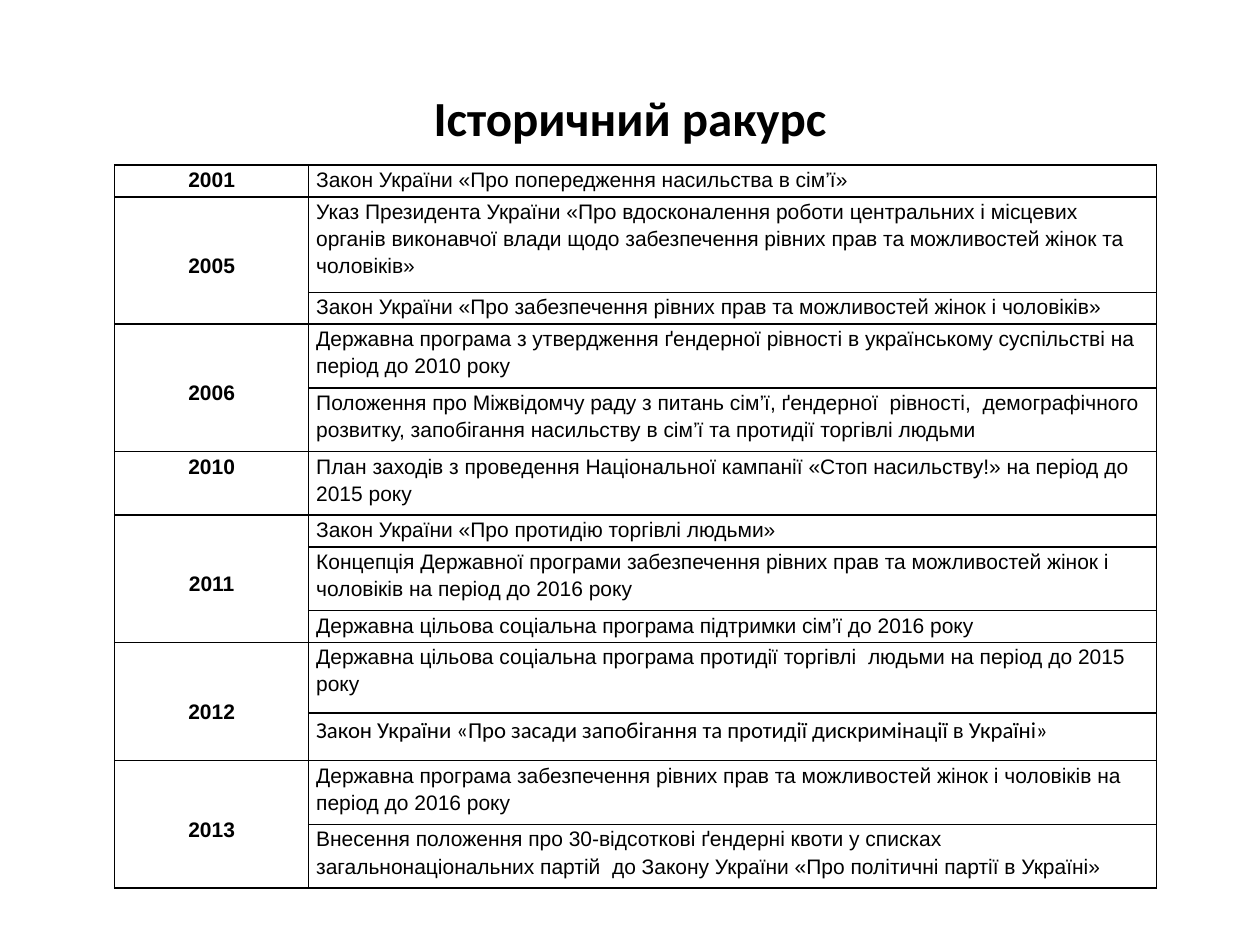
from lxml.etree import SubElement
from pptx import Presentation
from pptx.dml.color import RGBColor
from pptx.enum.text import MSO_ANCHOR as Anchor, PP_ALIGN as Align
from pptx.oxml.ns import qn
from pptx.util import Inches, Pt

BLACK = RGBColor(0x00, 0x00, 0x00)
WHITE = RGBColor(0xFF, 0xFF, 0xFF)
SLIDE_W, SLIDE_H = Inches(10), Inches(7.5)

# Row heights: one text line is the unit, two rows are set apart
LINE = 4.8 / 19
TALL, SPACED = 0.56, 0.38
YEAR_DROP = Inches(0.43)

# Year, then its documents as (text, row height)
HISTORY = [
    ("2001", [("Закон України «Про попередження насильства в сім’ї»", LINE)]),
    ("2005", [
        ("Указ Президента України «Про вдосконалення роботи центральних і місцевих "
         "органів виконавчої влади щодо забезпечення рівних прав та можливостей "
         "жінок та чоловіків»", 3 * LINE),
        ("Закон України «Про забезпечення рівних прав та можливостей жінок "
         "і чоловіків»", LINE),
    ]),
    ("2006", [
        ("Державна програма з утвердження ґендерної рівності в українському "
         "суспільстві на період до 2010 року", 2 * LINE),
        ("Положення про Міжвідомчу раду з питань сім’ї, ґендерної  рівності,  "
         "демографічного  розвитку, запобігання насильству в сім’ї та протидії "
         "торгівлі людьми", 2 * LINE),
    ]),
    ("2010", [
        ("План заходів з проведення Національної кампанії «Стоп насильству!» "
         "на період до 2015 року", 2 * LINE),
    ]),
    ("2011", [
        ("Закон України «Про протидію торгівлі людьми»", LINE),
        ("Концепція Державної програми забезпечення рівних прав та можливостей "
         "жінок і чоловіків на період до 2016 року", 2 * LINE),
        ("Державна цільова соціальна програма підтримки сім’ї до 2016 року", LINE),
    ]),
    ("2012", [
        ("Державна цільова соціальна програма протидії торгівлі  людьми на період "
         "до 2015 року", TALL),
        ("Закон України «Про засади запобігання та протидії дискримінації "
         "в Україні»", SPACED),
    ]),
    ("2013", [
        ("Державна програма забезпечення рівних прав та можливостей жінок "
         "і чоловіків на період до 2016 року", 2 * LINE),
        ("Внесення положення про 30-відсоткові ґендерні квоти у списках "
         "загальнонаціональних партій  до Закону України «Про політичні партії "
         "в Україні»", 2 * LINE),
    ]),
]


def write(frame, text, size, font="Arial", bold=False, align=Align.LEFT):
    frame.text = text
    paragraph = frame.paragraphs[0]
    paragraph.alignment = align
    style = paragraph.runs[0].font
    style.name, style.size, style.bold = font, Pt(size), bold
    style.color.rgb = BLACK
    return paragraph


def add_title(slide, text):
    title = slide.shapes.add_textbox(
        int(SLIDE_W * 0.05), int(SLIDE_H * 0.04),
        int(SLIDE_W * 0.9), Inches(1.25))
    title.text_frame.word_wrap = True
    title.text_frame.vertical_anchor = Anchor.MIDDLE
    write(title.text_frame, text, 28, "Calibri", True, Align.CENTER)


def style_cell(cell):
    """White cell with narrow side margins and a thin black border."""
    cell.margin_left = cell.margin_right = Inches(0.06)
    cell.margin_top = cell.margin_bottom = 0
    # Borders come before the fill in the cell properties
    properties = cell._tc.get_or_add_tcPr()
    for side in ("a:lnL", "a:lnR", "a:lnT", "a:lnB"):
        border = SubElement(properties, qn(side), w=str(Pt(1)))
        color = SubElement(SubElement(border, qn("a:solidFill")), qn("a:srgbClr"))
        color.set("val", str(BLACK))
    cell.fill.solid()
    cell.fill.fore_color.rgb = WHITE


def fill_year(table, first, count, year):
    cell = table.cell(first, 0)
    if count > 1:
        cell.merge(table.cell(first + count - 1, 0))
        cell.margin_top = YEAR_DROP
    label = write(cell.text_frame, year, 12, bold=True, align=Align.CENTER)
    label.line_spacing = 1.15


def fill_document(cell, text, height):
    size, font = (13, "Calibri") if height == SPACED else (12, "Arial")
    write(cell.text_frame, text, size, font).line_spacing = 1.15


def add_history(slide):
    heights = [height for _, documents in HISTORY for _, height in documents]
    year_w, document_w = Inches(1.54), Inches(6.73)
    table = slide.shapes.add_table(
        len(heights), 2, Inches(0.91), Inches(1.31),
        year_w + document_w, Inches(sum(heights))).table
    table.first_row = table.horz_banding = False
    table.columns[0].width, table.columns[1].width = year_w, document_w
    for row, height in zip(table.rows, heights):
        row.height = Inches(height)
    for cell in table.iter_cells():
        style_cell(cell)

    first = 0
    for year, documents in HISTORY:
        fill_year(table, first, len(documents), year)
        for row, (text, height) in enumerate(documents, first):
            fill_document(table.cell(row, 1), text, height)
        first += len(documents)


def main():
    deck = Presentation()
    deck.slide_width, deck.slide_height = SLIDE_W, SLIDE_H
    slide = deck.slides.add_slide(deck.slide_layouts[6])
    add_title(slide, "Історичний ракурс")
    add_history(slide)
    deck.save("out.pptx")


if __name__ == "__main__":
    main()
